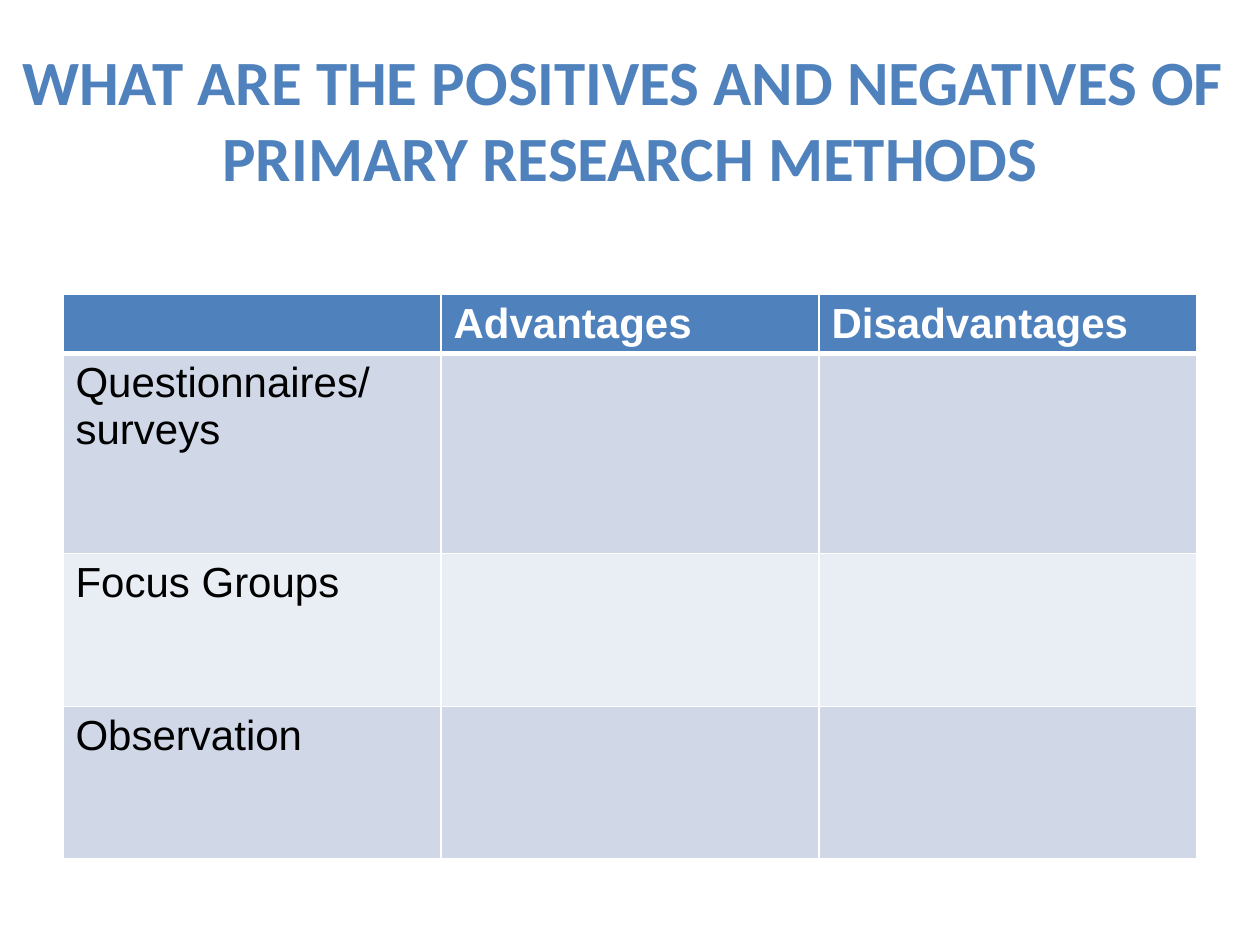
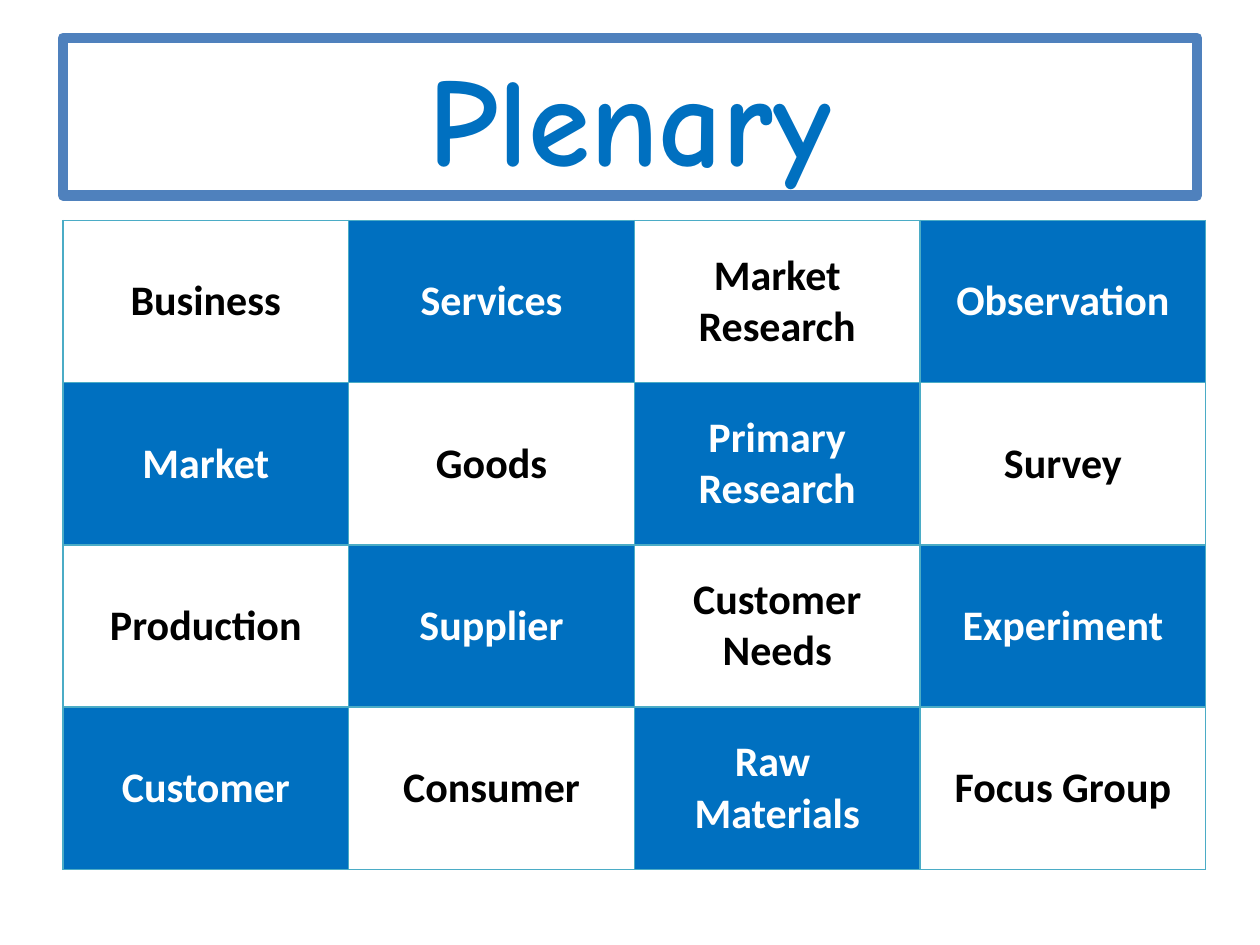
from dataclasses import dataclass

from lxml import etree
from pptx import Presentation
from pptx.dml.color import RGBColor
from pptx.enum import shapes, text
from pptx.oxml import ns
from pptx.util import Pt

QUESTION = "WHAT ARE THE POSITIVES AND NEGATIVES OF \nPRIMARY RESEARCH METHODS"
METHODS = [
    ["", "Advantages", "Disadvantages"],
    ["Questionnaires/\nsurveys", "", ""],
    ["Focus Groups", "", ""],
    ["Observation", "", ""],
]
METHOD_ROW_HEIGHTS = [34, 114.2, 87.4, 87.4]

PLENARY = "Plenary"
KEY_TERMS = [
    ["Business", "Services", "Market Research", "Observation"],
    ["Market", "Goods", "Primary Research", "Survey"],
    ["Production", "Supplier", "Customer Needs", "Experiment"],
    ["Customer", "Consumer", "Raw \nMaterials", "Focus Group"],
]


@dataclass(frozen=True)
class Theme:
    accent: str = "4F81BD"
    strong: str = "0070C0"
    grid: str = "4BACC6"
    band_dark: str = "D0D8E8"
    band_light: str = "E9EDF4"
    white: str = "FFFFFF"
    black: str = "000000"
    heading_font: str = "Calibri"
    table_font: str = "Arial"
    display_font: str = "Comic Neue"
    heading_size: int = 36
    table_size: int = 24
    display_size: int = 72
    left: int = 36
    width: int = 648


THEME = Theme()


def write(frame, content, font, size, color, bold=True, align=text.PP_ALIGN.CENTER):
    frame.text = content
    for paragraph in frame.paragraphs:
        paragraph.alignment = align
        for run in paragraph.runs:
            run.font.name = font
            run.font.size = Pt(size)
            run.font.bold = bold
            run.font.color.rgb = RGBColor.from_string(color)


def paint(target, color):
    target.fill.solid()
    target.fill.fore_color.rgb = RGBColor.from_string(color)


def border(cell, color, bottom=1):
    """Line all four sides one point wide, except for the bottom width."""
    properties = cell._tc.get_or_add_tcPr()
    for index, side in enumerate("LRTB"):
        width = bottom if side == "B" else 1
        line = etree.Element(ns.qn(f"a:ln{side}"), w=str(Pt(width)))
        fill = etree.SubElement(line, ns.qn("a:solidFill"))
        etree.SubElement(fill, ns.qn("a:srgbClr"), val=color)
        properties.insert(index, line)


def add_grid(slide, rows, top, width, heights, style_cell):
    """Add a table with equal columns; style_cell formats each cell by its place."""
    columns = len(rows[0])
    table = slide.shapes.add_table(
        len(rows), columns, Pt(THEME.left), Pt(top), Pt(width), Pt(sum(heights))
    ).table
    table.first_row = table.horz_banding = False
    for column in table.columns:
        column.width = Pt(width / columns)
    for row, (values, height) in enumerate(zip(rows, heights)):
        table.rows[row].height = Pt(height)
        for column, value in enumerate(values):
            style_cell(table.cell(row, column), value, row, column)


def style_method(cell, value, row, column):
    header = row == 0
    band = THEME.band_dark if row % 2 else THEME.band_light
    paint(cell, THEME.accent if header else band)
    border(cell, THEME.white, bottom=3 if header else 1)
    write(cell.text_frame, value, THEME.table_font, THEME.table_size,
          THEME.white if header else THEME.black, header, text.PP_ALIGN.LEFT)


def style_term(cell, value, row, column):
    filled = (row + column) % 2 == 1
    paint(cell, THEME.strong if filled else THEME.white)
    border(cell, THEME.grid)
    cell.vertical_anchor = text.MSO_ANCHOR.MIDDLE
    write(cell.text_frame, value, THEME.heading_font, THEME.table_size,
          THEME.white if filled else THEME.black)


def build_methods(slide):
    add_grid(slide, METHODS, 168, THEME.width, METHOD_ROW_HEIGHTS, style_method)
    heading = slide.shapes.add_textbox(Pt(2), Pt(21), Pt(716), Pt(94.5))
    heading.text_frame.word_wrap = False
    write(heading.text_frame, QUESTION, THEME.heading_font, THEME.heading_size,
          THEME.accent)


def build_plenary(slide):
    banner = slide.shapes.add_shape(
        shapes.MSO_SHAPE.RECTANGLE, Pt(THEME.left), Pt(21.6), Pt(THEME.width), Pt(90)
    )
    banner.shadow.inherit = False
    paint(banner, THEME.white)
    banner.line.color.rgb = RGBColor.from_string(THEME.accent)
    banner.line.width = Pt(6)
    etree.SubElement(banner.line._get_or_add_ln(), ns.qn("a:round"))
    banner.text_frame.vertical_anchor = text.MSO_ANCHOR.MIDDLE
    write(banner.text_frame, PLENARY, THEME.display_font, THEME.display_size,
          THEME.strong)
    add_grid(slide, KEY_TERMS, 126, 653, [92.7] * len(KEY_TERMS), style_term)


def main():
    presentation = Presentation()
    presentation.slide_width, presentation.slide_height = Pt(720), Pt(540)
    blank = presentation.slide_layouts[6]
    for build in (build_methods, build_plenary):
        build(presentation.slides.add_slide(blank))
    presentation.save("out.pptx")


if __name__ == "__main__":
    main()
